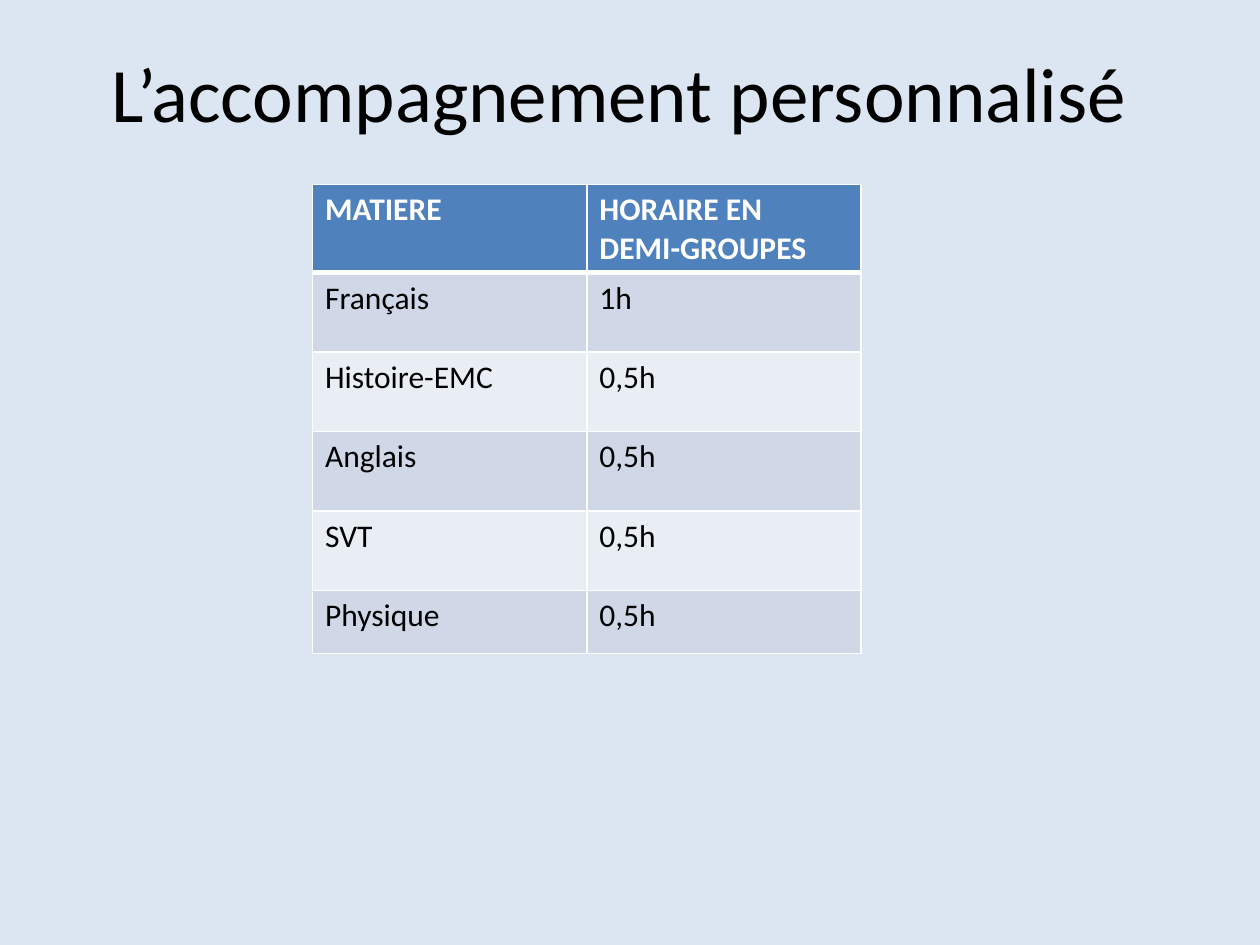
from dataclasses import dataclass
from typing import NamedTuple

from lxml.etree import SubElement
from pptx import Presentation
from pptx.dml.color import RGBColor
from pptx.enum.text import MSO_ANCHOR, PP_ALIGN
from pptx.oxml.ns import qn
from pptx.slide import Slide
from pptx.table import _Cell
from pptx.text.text import TextFrame
from pptx.util import Cm, Pt


@dataclass(frozen=True)
class Theme:
    font: str = "Calibri"
    background: str = "DCE6F2"
    ink: str = "000000"
    white: str = "FFFFFF"
    header: str = "4F81BD"
    bands: tuple[str, str] = ("D0D8E8", "E9EDF4")
    title_size: int = 44
    table_size: int = 18
    border: int = 1
    header_border: int = 3


class Lesson(NamedTuple):
    subject: str
    hours: str


THEME = Theme()
HEADER = Lesson("MATIERE", "HORAIRE EN DEMI-GROUPES")
LESSONS = [
    Lesson("Français", "1h"),
    Lesson("Histoire-EMC", "0,5h"),
    Lesson("Anglais", "0,5h"),
    Lesson("SVT", "0,5h"),
    Lesson("Physique", "0,5h"),
]
COLUMN_WIDTH = Cm(5.53)
ROW_HEIGHT = Cm(1.6)
LAST_ROW_HEIGHT = Cm(1.27)


def write_text(frame: TextFrame, text: str, *, size: int, color: str,
               bold: bool = False, align: PP_ALIGN = PP_ALIGN.LEFT) -> None:
    para = frame.paragraphs[0]
    para.alignment = align
    span = para.add_run()
    span.text = text
    span.font.name = THEME.font
    span.font.size = Pt(size)
    span.font.bold = bold
    span.font.color.rgb = RGBColor.from_string(color)


def add_title(slide: Slide, text: str) -> None:
    box = slide.shapes.add_textbox(Cm(1.27), Cm(0.76), Cm(22.43), Cm(2.16))
    frame = box.text_frame
    frame.word_wrap = True
    frame.vertical_anchor = MSO_ANCHOR.MIDDLE
    write_text(frame, text, size=THEME.title_size, color=THEME.ink, align=PP_ALIGN.CENTER)


def set_borders(cell: _Cell, *, top: int, bottom: int) -> None:
    """Draw white edges, with widths in points; call before filling the cell."""
    properties = cell._tc.get_or_add_tcPr()
    widths = {"L": THEME.border, "R": THEME.border, "T": top, "B": bottom}
    for side, width in widths.items():
        line = SubElement(properties, qn(f"a:ln{side}"), w=str(Pt(width)))
        fill = SubElement(line, qn("a:solidFill"))
        SubElement(fill, qn("a:srgbClr"), val=THEME.white)


def add_lesson_table(slide: Slide, rows: list[Lesson]) -> None:
    """Draw the rows as a table whose first row is the header."""
    columns = len(Lesson._fields)
    height = ROW_HEIGHT * (len(rows) - 1) + LAST_ROW_HEIGHT
    table = slide.shapes.add_table(
        len(rows), columns, Cm(6.3), Cm(3.72), COLUMN_WIDTH * columns, height).table
    for row in table.rows:
        row.height = ROW_HEIGHT
    table.rows[len(rows) - 1].height = LAST_ROW_HEIGHT

    for index, lesson in enumerate(rows):
        is_header = index == 0
        shade = THEME.header if is_header else THEME.bands[(index - 1) % 2]
        for column, text in enumerate(lesson):
            cell = table.cell(index, column)
            set_borders(cell,
                        top=THEME.header_border if index == 1 else THEME.border,
                        bottom=THEME.header_border if is_header else THEME.border)
            cell.fill.solid()
            cell.fill.fore_color.rgb = RGBColor.from_string(shade)
            write_text(cell.text_frame, text, size=THEME.table_size, bold=is_header,
                       color=THEME.white if is_header else THEME.ink)


def main() -> None:
    deck = Presentation()
    deck.slide_width, deck.slide_height = Cm(25.4), Cm(19.05)
    slide = deck.slides.add_slide(deck.slide_layouts[6])
    slide.background.fill.solid()
    slide.background.fill.fore_color.rgb = RGBColor.from_string(THEME.background)
    add_title(slide, "L’accompagnement personnalisé")
    add_lesson_table(slide, [HEADER, *LESSONS])
    deck.save("out.pptx")


if __name__ == "__main__":
    main()
